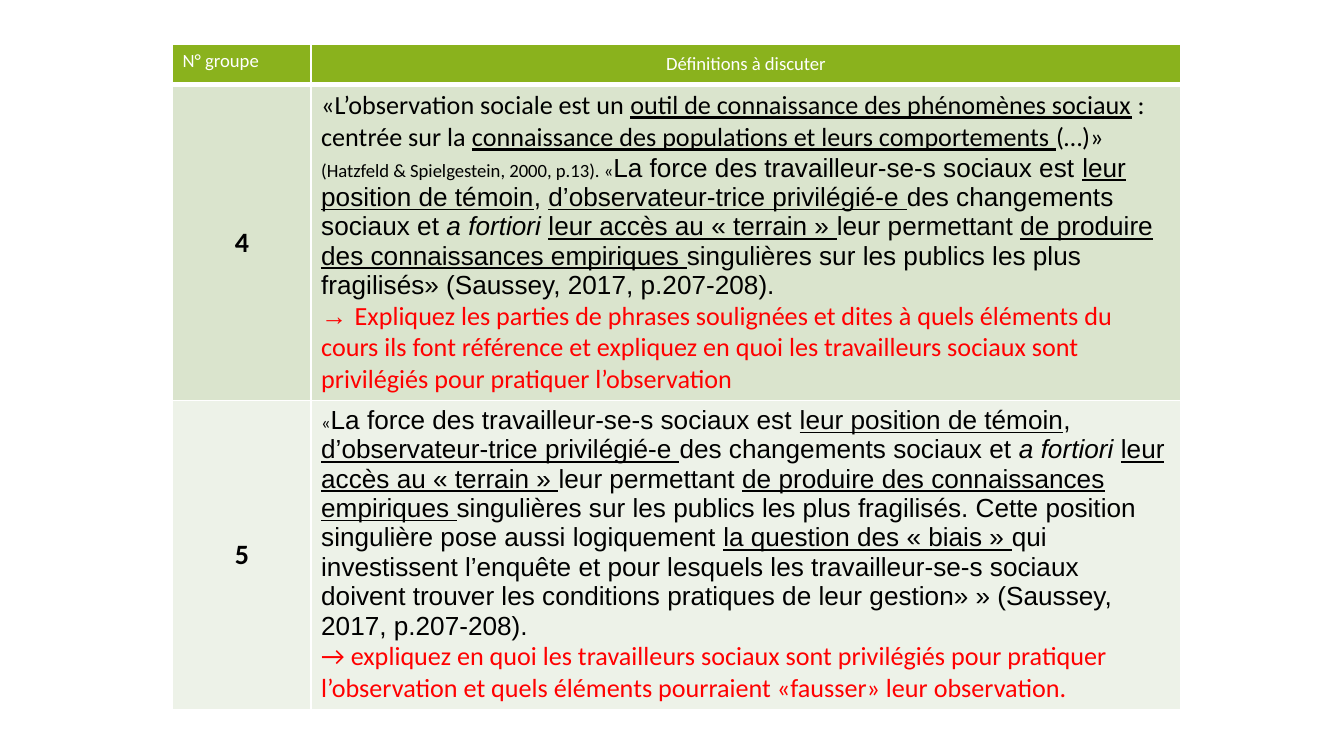
import pptx
import pptx.dml.color
import pptx.enum.text
import pptx.oxml
import pptx.oxml.ns
import pptx.util

Pt = pptx.util.Pt
Align = pptx.enum.text.PP_ALIGN
Anchor = pptx.enum.text.MSO_ANCHOR

COLUMN_WIDTHS = [74.2, 465.8]
ROW_HEIGHTS = [21.6, 167.8, 151.2]
ROW_FILLS = ["8AB21D", "DAE4CD", "EDF2E8"]
MARGINS = {"margin_left": 5.4, "margin_right": 5.4,
           "margin_top": 2.7, "margin_bottom": 2.7}

BASE = {"name": "Calibri", "size": 14, "color": "000000",
        "bold": False, "italic": False, "underline": False}
HEADER = BASE | {"size": 10, "color": "FFFFFF"}
NUMBER = BASE | {"size": 15, "bold": True}
LEAD = BASE
LEAD_KEY = BASE | {"underline": True}
SMALL = BASE | {"size": 10}
QUOTE = BASE | {"name": "Arial"}
KEY = QUOTE | {"underline": True}
LATIN = QUOTE | {"italic": True}
TASK = BASE | {"color": "FF0000"}
TASK_ARROW = TASK | {"name": "Arial"}

WITNESS_QUOTE = [
    ("La force des travailleur-se-s sociaux est ", QUOTE),
    ("leur position de témoin", KEY),
    (", ", QUOTE),
    ("d’observateur-trice privilégié-e ", KEY),
    ("des changements sociaux et ", QUOTE),
    ("a fortiori ", LATIN),
    ("leur accès au « terrain » ", KEY),
    ("leur permettant ", QUOTE),
    ("de produire des connaissances empiriques ", KEY),
]
GROUP_4 = [
    [
        ("«L’observation sociale est un ", LEAD),
        ("outil de connaissance des phénomènes sociaux", LEAD_KEY),
        (" : centrée sur la ", LEAD),
        ("connaissance des populations et leurs comportements ", LEAD_KEY),
        ("(…)» ", LEAD),
        ("(Hatzfeld & Spielgestein, 2000, p.13). «", SMALL),
        *WITNESS_QUOTE,
        ("singulières sur les publics les plus fragilisés» "
         "(Saussey, 2017, p.207-208).", QUOTE),
    ],
    [
        ("→ ", TASK_ARROW),
        ("Expliquez les parties de phrases soulignées et dites à quels éléments "
         "du cours ils font référence et expliquez en quoi les travailleurs "
         "sociaux sont privilégiés pour pratiquer l’observation", TASK),
    ],
]
GROUP_5 = [
    [
        ("«", SMALL),
        *WITNESS_QUOTE,
        ("singulières sur les publics les plus fragilisés. Cette position "
         "singulière pose aussi logiquement ", QUOTE),
        ("la question des « biais » ", KEY),
        ("qui investissent l’enquête et pour lesquels les travailleur-se-s "
         "sociaux doivent trouver les conditions pratiques de leur gestion» » "
         "(Saussey, 2017, p.207-208).", QUOTE),
    ],
    [
        ("→ expliquez en quoi les travailleurs sociaux sont privilégiés pour "
         "pratiquer l’observation et quels éléments pourraient «fausser» leur "
         "observation.", TASK),
    ],
]
# Each cell: paragraphs of (text, format) runs, alignment, vertical anchor
ROWS = [
    [([[("N° groupe", HEADER)]], Align.LEFT, Anchor.TOP),
     ([[("Définitions à discuter", HEADER)]], Align.CENTER, Anchor.MIDDLE)],
    [([[("4", NUMBER)]], Align.CENTER, Anchor.MIDDLE),
     (GROUP_4, Align.LEFT, Anchor.TOP)],
    [([[("5", NUMBER)]], Align.CENTER, Anchor.MIDDLE),
     (GROUP_5, Align.LEFT, Anchor.TOP)],
]


def rgb(value):
    return pptx.dml.color.RGBColor.from_string(value)


def add_span(para, text, style):
    span = para.add_run()
    span.text = text
    values = style | {"size": Pt(style["size"])}
    span.font.color.rgb = rgb(values.pop("color"))
    for name, value in values.items():
        setattr(span.font, name, value)


def set_borders(cell, color, bottom_width):
    """Draw all four sides; the border elements must come before the fill."""
    widths = {"lnL": 1, "lnR": 1, "lnT": 1, "lnB": bottom_width}
    properties = cell._tc.get_or_add_tcPr()
    for index, (side, width) in enumerate(widths.items()):
        line = pptx.oxml.parse_xml(
            f'<a:{side} {pptx.oxml.ns.nsdecls("a")} w="{Pt(width)}">'
            f'<a:solidFill><a:srgbClr val="{color}"/></a:solidFill></a:{side}>')
        properties.insert(index, line)


def fill_cell(cell, paragraphs, alignment, anchor, color):
    cell.fill.solid()
    cell.fill.fore_color.rgb = rgb(color)
    cell.vertical_anchor = anchor
    for name, value in MARGINS.items():
        setattr(cell, name, Pt(value))
    frame = cell.text_frame
    for index, spans in enumerate(paragraphs):
        para = frame.add_paragraph() if index else frame.paragraphs[0]
        para.alignment = alignment
        for text, style in spans:
            add_span(para, text, style)


def add_definitions_table(page):
    frame = page.shapes.add_table(
        len(ROW_HEIGHTS), len(COLUMN_WIDTHS),
        Pt(92.5), Pt(23.8), Pt(sum(COLUMN_WIDTHS)), Pt(sum(ROW_HEIGHTS)))
    table = frame.table
    for column, width in zip(table.columns, COLUMN_WIDTHS):
        column.width = Pt(width)
    for row_index, (row, height) in enumerate(zip(table.rows, ROW_HEIGHTS)):
        row.height = Pt(height)
        for cell, content in zip(row.cells, ROWS[row_index]):
            fill_cell(cell, *content, ROW_FILLS[row_index])
            set_borders(cell, "FFFFFF", 1 if row_index else 3)
    frame.height = Pt(368.6)


def main():
    deck = pptx.Presentation()
    deck.slide_width, deck.slide_height = Pt(720), Pt(405)
    page = deck.slides.add_slide(deck.slide_layouts.get_by_name("Blank"))
    add_definitions_table(page)
    deck.save("out.pptx")


if __name__ == "__main__":
    main()
